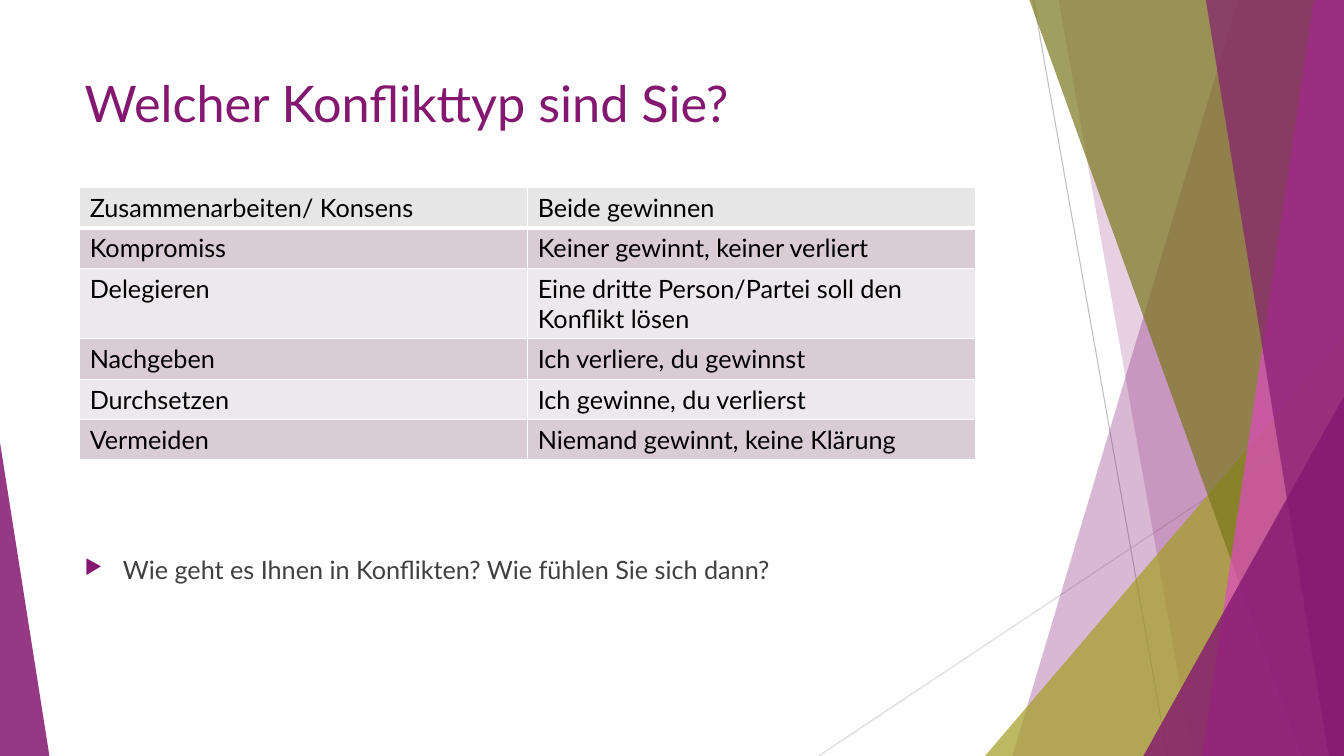
import pptx
import pptx.util
import pptx.dml.color
import pptx.enum.shapes
import pptx.enum.text
import pptx.oxml
import pptx.oxml.ns
import lxml.etree

WIDE, HIGH = 13.33, 7.5
FONT = "Lato"
PLUM, OLIVE, MOSS, PINK = "841770", "A39E26", "7A771C", "DF4AC4"
HEAD, DARK, PALE = "E7E6E6", "D9CCD5", "EDE8EB"

TITLE = "Welcher Konflikttyp sind Sie?"
ASK = "Wie geht es Ihnen in Konflikten? Wie fühlen Sie sich dann?"
TYPES = [
    ("Zusammenarbeiten/ Konsens", "Beide gewinnen"),
    ("Kompromiss", "Keiner gewinnt, keiner verliert"),
    ("Delegieren", "Eine dritte Person/Partei soll den Konflikt lösen"),
    ("Nachgeben", "Ich verliere, du gewinnst"),
    ("Durchsetzen", "Ich gewinne, du verlierst"),
    ("Vermeiden", "Niemand gewinnt, keine Klärung"),
]
ROWS = [0.4, 0.4, 0.7, 0.4, 0.4, 0.4]
COL = WIDE / 3

LINES = [
    ((10.25, 0), (11.58, HIGH), "BFBFBF"),
    ((WIDE, 4.03), (8.12, HIGH), "D9D9D9"),
]
DECOR = [
    ("band", 12.28, 10.04, PLUM, 30),
    ("band", 10.5, 11.83, PLUM, 20),
    ("right", 3.56, 4.17, OLIVE, 72),
    ("band", 10.21, 12.91, MOSS, 70),
    ("band", 13.03, 11.92, PINK, 70),
    ("band", 11.96, 13.18, PLUM, 65),
    ("right", 1.99, 3.57, PLUM, 80),
    ("left", 0.49, 3.11, PLUM, 85),
]

inch = pptx.util.Inches


def hue(code):
    return pptx.dml.color.RGBColor.from_string(code)


def tag(up, name, **keys):
    node = lxml.etree.SubElement(up, pptx.oxml.ns.qn("a:" + name))
    for key, val in keys.items():
        node.set(key, str(val))
    return node


def write(frame, text, size=18, color="000000"):
    frame.word_wrap = True
    frame.auto_size = pptx.enum.text.MSO_AUTO_SIZE.NONE
    frame.vertical_anchor = pptx.enum.text.MSO_ANCHOR.TOP
    para = frame.paragraphs[0]
    para.alignment = pptx.enum.text.PP_ALIGN.LEFT
    run = para.add_run()
    run.text = text
    run.font.name, run.font.size = FONT, pptx.util.Pt(size)
    run.font.bold = False
    run.font.color.rgb = hue(color)
    return para


def line(slide, start, end, color):
    rule = slide.shapes.add_connector(
        pptx.enum.shapes.MSO_CONNECTOR.STRAIGHT,
        *[inch(num) for num in start + end])
    rule.line.color.rgb = hue(color)
    rule.line.width = pptx.util.Pt(0.75)
    tag(rule.element.spPr, "effectLst")


def band(slide, top, base):
    pen = slide.shapes.build_freeform(inch(top), 0)
    ends = [(WIDE, 0), (WIDE, HIGH), (base, HIGH)]
    pen.add_line_segments([(inch(x), inch(y)) for x, y in ends], close=True)
    return pen.convert_to_shape()


def wedge(slide, side, wide, high):
    left = WIDE - wide if side == "right" else 0
    shape = slide.shapes.add_shape(
        pptx.enum.shapes.MSO_SHAPE.ISOSCELES_TRIANGLE,
        inch(left), inch(HIGH - high), inch(wide), inch(high))
    shape.adjustments[0] = 1 if side == "right" else 0
    return shape


def paint(shape, color, alpha):
    shape.shadow.inherit = False
    shape.fill.solid()
    shape.fill.fore_color.rgb = hue(color)
    shape.line.fill.background()
    fill = shape.element.spPr.find(pptx.oxml.ns.qn("a:solidFill"))
    tag(fill[0], "alpha", val=alpha * 1000)


def edge(cell, row):
    prop = cell._tc.get_or_add_tcPr()
    for side in "LRTB":
        thick = (row, side) in [(0, "B"), (1, "T")]
        rule = tag(prop, "ln" + side, w=pptx.util.Pt(3 if thick else 1))
        tag(tag(rule, "solidFill"), "srgbClr", val="FFFFFF")


def grid(slide):
    table = slide.shapes.add_table(
        len(TYPES), 2, inch(0.79), inch(1.86),
        inch(2 * COL), inch(sum(ROWS))).table
    table.horz_banding = False
    for col in table.columns:
        col.width = inch(COL)
    for row, pair in enumerate(TYPES):
        table.rows[row].height = inch(ROWS[row])
        for col, text in enumerate(pair):
            cell = table.cell(row, col)
            edge(cell, row)
            cell.fill.solid()
            shade = HEAD if row == 0 else DARK if row % 2 else PALE
            cell.fill.fore_color.rgb = hue(shade)
            write(cell.text_frame, text)


def main():
    deck = pptx.Presentation()
    deck.slide_width, deck.slide_height = inch(WIDE), inch(HIGH)
    slide = deck.slides.add_slide(deck.slide_layouts[5])
    for rule in LINES:
        line(slide, *rule)
    for kind, one, two, color, alpha in DECOR:
        if kind == "band":
            shape = band(slide, one, two)
        else:
            shape = wedge(slide, kind, one, two)
        paint(shape, color, alpha)

    title = slide.shapes.title
    title.left, title.top = inch(0.74), inch(0.67)
    title.width, title.height = inch(9.4), inch(1.1)
    write(title.text_frame, TITLE, size=36, color=PLUM)

    grid(slide)

    box = slide.shapes.add_textbox(
        inch(0.74), inch(5.45), inch(9.4), inch(0.4))
    prop = write(box.text_frame, ASK, color="404040")._p.get_or_add_pPr()
    prop.set("marL", str(inch(0.38)))
    prop.set("indent", str(inch(-0.38)))
    tag(tag(prop, "buClr"), "srgbClr", val=PLUM)
    tag(prop, "buSzPct", val=80000)
    tag(prop, "buFont", typeface="Wingdings 3")
    tag(prop, "buChar", char="▶")
    prop.remove(prop.find(pptx.oxml.ns.qn("a:buFont")))
    deck.save("out.pptx")


if __name__ == "__main__":
    main()
